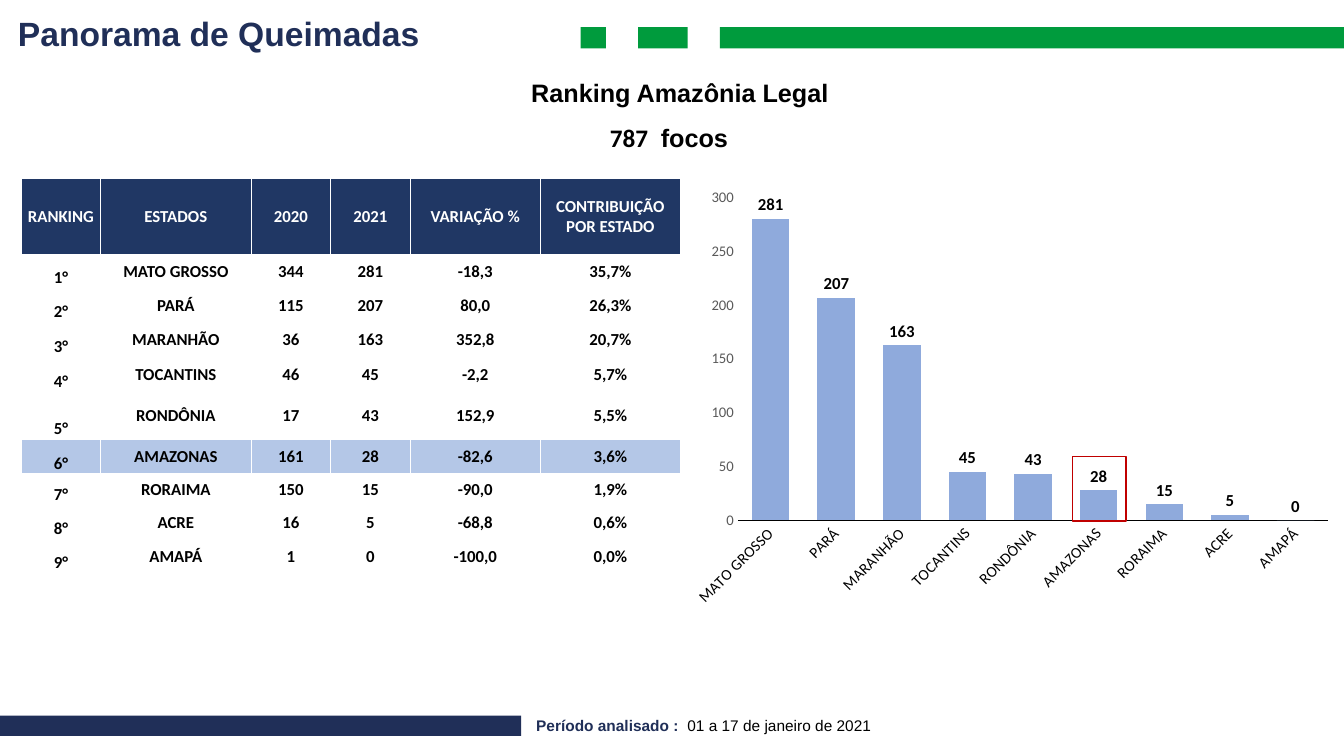
from lxml import etree
from pptx import Presentation, util as u
from pptx.chart.data import CategoryChartData
from pptx.dml.color import RGBColor
from pptx.enum import chart as ch, shapes, text
from pptx.oxml import parse_xml
from pptx.oxml.ns import nsdecls, qn

COLORS = {"green": "009B3D", "navy": "202F58", "header": "203764", "highlight": "B4C7E7",
          "bar": "8FAADC", "marker": "C00000", "axis": "595959", "black": "000000", "white": "FFFFFF"}

HEADER = ("RANKING", "ESTADOS", "2020", "2021", "VARIAÇÃO %", "CONTRIBUIÇÃO POR ESTADO")
STATES = [  # state, fires in 2020, fires in 2021, variation, share
    ("MATO GROSSO", 344, 281, "-18,3", "35,7%"),
    ("PARÁ", 115, 207, "80,0", "26,3%"),
    ("MARANHÃO", 36, 163, "352,8", "20,7%"),
    ("TOCANTINS", 46, 45, "-2,2", "5,7%"),
    ("RONDÔNIA", 17, 43, "152,9", "5,5%"),
    ("AMAZONAS", 161, 28, "-82,6", "3,6%"),
    ("RORAIMA", 150, 15, "-90,0", "1,9%"),
    ("ACRE", 16, 5, "-68,8", "0,6%"),
    ("AMAPÁ", 1, 0, "-100,0", "0,0%"),
]
HIGHLIGHTED = "AMAZONAS"
COL_WIDTHS = (0.79, 1.49, 0.79, 0.79, 1.29, 1.39)
ROW_HEIGHTS = (0.75, 0.34, 0.34, 0.34, 0.35, 0.47, 0.34, 0.31, 0.34, 0.34)
BANDS = [  # left, top, width, height, colour
    (7.14, 0.27, 6.19, 0.21, "green"),
    (6.33, 0.27, 0.49, 0.21, "green"),
    (5.76, 0.27, 0.25, 0.21, "green"),
    (0, 7.1, 5.17, 0.2, "navy"),
]
CAPTIONS = [  # box, wraps, size, runs of (words, font, colour, bold)
    ((5.22, 7.06, 5.7, 0.29), True, 11,
     [("Período analisado :  ", "Arial", "navy", True),
      ("01 a 17 de janeiro de 2021", "Arial", "black", False)]),
    ((0.08, 0.08, 6.83, 0.5), True, 24, [("Panorama de Queimadas", "Arial", "navy", True)]),
    ((5.95, 1.16, 1.39, 0.4), False, 18,
     [("787 ", "Calibri", "black", True), (" focos", "Arial", "black", True)]),
    ((5.17, 0.72, 3.18, 0.4), False, 18, [("Ranking Amazônia Legal", "Arial", "black", True)]),
]
CONTENT_TOP = 1.77
PLOT_AREA = {"x": 0.087, "y": 0.042, "w": 0.913, "h": 0.683}


def rgb(name):
    return RGBColor.from_string(COLORS[name])


def inches(*lengths):
    return [u.Inches(length) for length in lengths]


def style(font, size, color, bold=False, face="Calibri"):
    font.name, font.size, font.bold = face, u.Pt(size), bold
    font.color.rgb = rgb(color)


def add_rect(slide, box, fill=None, line=None):
    rect = slide.shapes.add_shape(shapes.MSO_SHAPE.RECTANGLE, *inches(*box))
    rect.shadow.inherit = False
    if fill:
        rect.fill.solid()
        rect.fill.fore_color.rgb = rgb(fill)
    else:
        rect.fill.background()
    if line:
        rect.line.color.rgb, rect.line.width = rgb(line), u.Pt(1)
    else:
        rect.line.fill.background()


def add_caption(slide, box, wraps, size, runs):
    frame = slide.shapes.add_textbox(*inches(*box)).text_frame
    frame.word_wrap = wraps
    frame.auto_size = text.MSO_AUTO_SIZE.SHAPE_TO_FIT_TEXT
    for words, face, color, bold in runs:
        run = frame.paragraphs[0].add_run()
        run.text = words
        style(run.font, size, color, bold, face)


def fill_cell(cell, words, fill, color, anchor):
    cell.margin_left = cell.margin_top = cell.margin_right = u.Inches(0.01)
    cell.margin_bottom = 0
    cell.vertical_anchor = anchor
    cell.text = str(words)
    paragraph = cell.text_frame.paragraphs[0]
    paragraph.alignment = text.PP_ALIGN.CENTER
    style(paragraph.font, 12, color, True)
    # Borders come before the fill in the cell properties
    for side in ("lnL", "lnR", "lnT", "lnB"):
        cell._tc.get_or_add_tcPr().append(parse_xml(
            f'<a:{side} {nsdecls("a")} w="6350"><a:solidFill>'
            f'<a:srgbClr val="{COLORS["white"]}"/></a:solidFill></a:{side}>'))
    if fill:
        cell.fill.solid()
        cell.fill.fore_color.rgb = rgb(fill)
    else:
        cell.fill.background()


def add_ranking(slide):
    rows = [HEADER] + [(f"{rank}°", *state) for rank, state in enumerate(STATES, 1)]
    ranking = slide.shapes.add_table(len(rows), len(HEADER), *inches(
        0.21, CONTENT_TOP, sum(COL_WIDTHS), sum(ROW_HEIGHTS))).table
    ranking.horz_banding = False
    for column, width in zip(ranking.columns, COL_WIDTHS):
        column.width = u.Inches(width)
    for row, height in zip(ranking.rows, ROW_HEIGHTS):
        row.height = u.Inches(height)
    for r, row in enumerate(rows):
        fill = "header" if r == 0 else "highlight" if row[1] == HIGHLIGHTED else None
        for c, words in enumerate(row):
            is_rank = r > 0 and c == 0
            fill_cell(ranking.cell(r, c), words, fill, "black" if r else "white",
                      text.MSO_ANCHOR.BOTTOM if is_rank else text.MSO_ANCHOR.MIDDLE)


def add_fires_chart(slide):
    data = CategoryChartData(number_format="#,##0")
    data.categories = [state[0] for state in STATES]
    data.add_series("2021", [state[2] for state in STATES])
    chart = slide.shapes.add_chart(ch.XL_CHART_TYPE.COLUMN_CLUSTERED,
                                   *inches(6.76, CONTENT_TOP, 6.42, 4.68), data).chart
    chart.has_legend = chart.has_title = False
    style(chart.font, 10, "black")

    # Bars and their values
    plot = chart.plots[0]
    plot.gap_width, plot.vary_by_categories = 75, False
    bars = plot.series[0]
    bars.format.fill.solid()
    bars.format.fill.fore_color.rgb = rgb("bar")
    plot.has_data_labels = True
    labels = plot.data_labels
    labels.show_value, labels.position = True, ch.XL_LABEL_POSITION.OUTSIDE_END
    labels.number_format, labels.number_format_is_linked = "#,##0", False
    style(labels.font, 12, "black", True)

    # Axes
    states, fires = chart.category_axis, chart.value_axis
    for axis, size, color in ((states, 11, "black"), (fires, 10.5, "axis")):
        axis.major_tick_mark = axis.minor_tick_mark = ch.XL_TICK_MARK.NONE
        axis.has_major_gridlines = False
        style(axis.tick_labels.font, size, color)
    states.format.line.color.rgb, states.format.line.width = rgb("black"), u.Pt(0.75)
    states._element.find(qn("c:txPr")).find(qn("a:bodyPr")).set("rot", "-2700000")
    fires.format.line.fill.background()
    fires.minimum_scale, fires.maximum_scale, fires.major_unit = 0, 300, 50
    fires.tick_labels.number_format = "#,##0"
    fires.tick_labels.number_format_is_linked = False

    # Inner plot area as shares of the chart
    plot_area = chart._chartSpace.chart.plotArea
    for old in plot_area.findall(qn("c:layout")):
        plot_area.remove(old)
    layout = etree.Element(qn("c:layout"))
    manual = etree.SubElement(layout, qn("c:manualLayout"))
    settings = {"layoutTarget": "inner", "xMode": "edge", "yMode": "edge", **PLOT_AREA}
    for tag, value in settings.items():
        etree.SubElement(manual, qn(f"c:{tag}")).set("val", str(value))
    plot_area.insert(0, layout)


def main():
    deck = Presentation()
    deck.slide_width, deck.slide_height = inches(13.33, 7.5)
    slide = deck.slides.add_slide(deck.slide_layouts[6])
    for *box, color in BANDS:
        add_rect(slide, box, fill=color)
    add_fires_chart(slide)
    for caption in CAPTIONS:
        add_caption(slide, *caption)
    # Frame around the highlighted state's bar
    add_rect(slide, (10.64, 4.53, 0.53, 0.64), line="marker")
    add_ranking(slide)
    deck.save("out.pptx")


if __name__ == "__main__":
    main()
